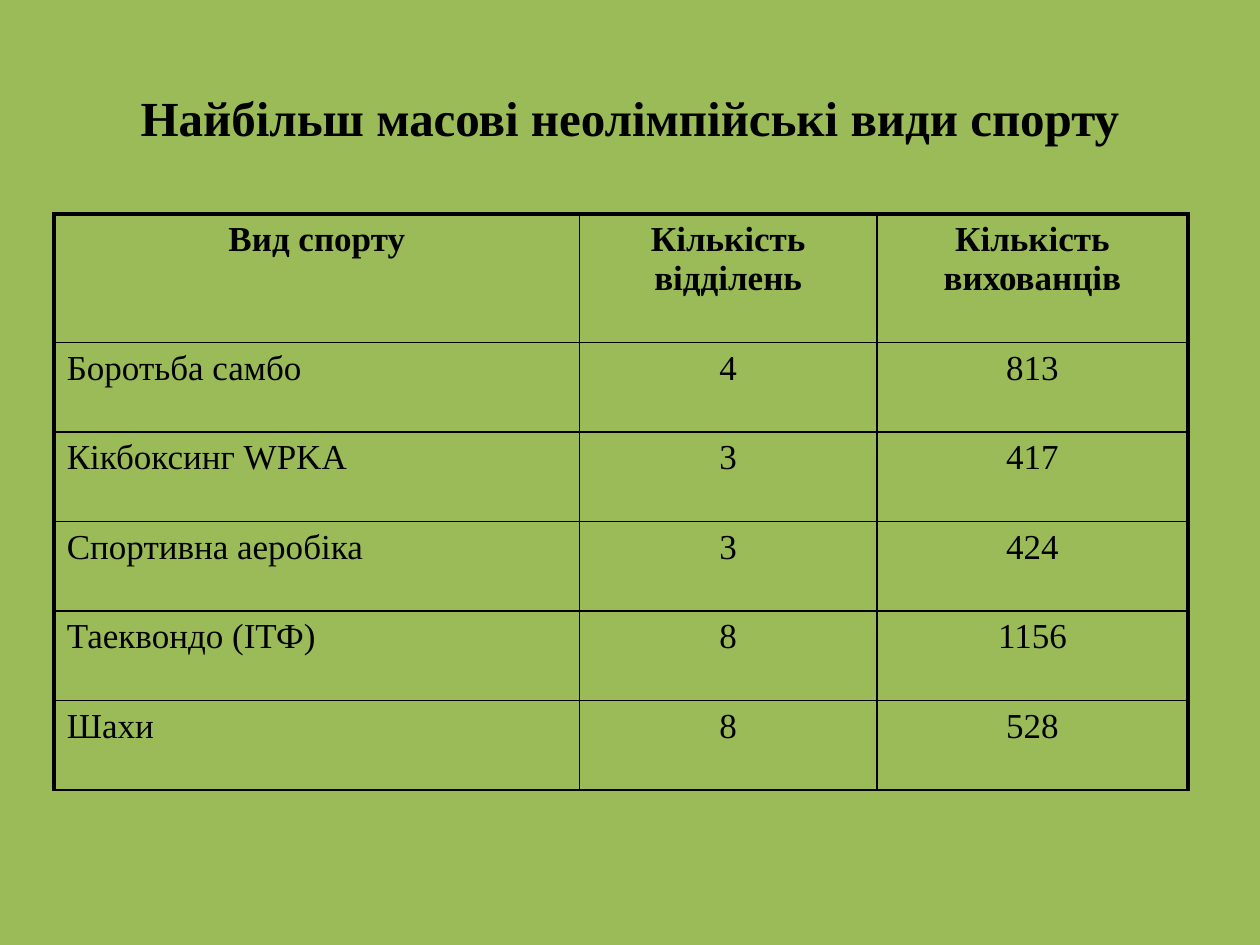
from lxml.etree import SubElement
from pptx import Presentation
from pptx.dml.color import RGBColor
from pptx.enum.text import MSO_ANCHOR, PP_ALIGN
from pptx.oxml.ns import qn
from pptx.util import Inches, Pt

GREEN = RGBColor(0x9B, 0xBB, 0x59)
BLACK = RGBColor(0, 0, 0)


def write(frame, text, size, bold, align):
    para = frame.paragraphs[0]
    para.alignment = align
    run = para.add_run()
    run.text = text
    run.font.color.rgb = BLACK
    style = {"name": "Times New Roman", "size": Pt(size), "bold": bold}
    for key, value in style.items():
        setattr(run.font, key, value)


def border(cell, sides):
    props = cell._tc.get_or_add_tcPr()
    for side, width in sides.items():
        line = SubElement(props, qn("a:" + side), w=str(Pt(width)))
        fill = SubElement(line, qn("a:solidFill"))
        SubElement(fill, qn("a:srgbClr"), val=str(BLACK))


prs = Presentation()
prs.slide_width, prs.slide_height = Inches(10), Inches(7.5)
slide = prs.slides.add_slide(prs.slide_layouts[6])
slide.background.fill.solid()
slide.background.fill.fore_color.rgb = GREEN

# Title
title = slide.shapes.add_textbox(Inches(0.5), Inches(0.3), Inches(9), Inches(1.25))
frame = title.text_frame
frame.word_wrap = True
frame.vertical_anchor = MSO_ANCHOR.MIDDLE
write(frame, "Найбільш масові неолімпійські види спорту", 28, True, PP_ALIGN.CENTER)

# Table grid
data = [
    ("Вид спорту", "Кількість відділень", "Кількість вихованців"),
    ("Боротьба самбо", "4", "813"),
    ("Кікбоксинг WPKA", "3", "417"),
    ("Спортивна аеробіка", "3", "424"),
    ("Таеквондо (ІТФ)", "8", "1156"),
    ("Шахи", "8", "528"),
]
widths = [4.17, 2.36, 2.47]
heights = [1.02] + [0.71] * 5
table = slide.shapes.add_table(
    len(data), len(widths), Inches(0.43), Inches(1.7),
    Inches(sum(widths)), Inches(sum(heights))).table
table.first_row = table.horz_banding = False
for col, width in zip(table.columns, widths):
    col.width = Inches(width)
for row, height in zip(table.rows, heights):
    row.height = Inches(height)

# Cells: bold header, centred numbers, thick outer frame
for i, texts in enumerate(data):
    for j, text in enumerate(texts):
        cell = table.cell(i, j)
        head = i == 0
        align = PP_ALIGN.CENTER if head or j else PP_ALIGN.LEFT
        write(cell.text_frame, text, 20, head, align)
        border(cell, {
            "lnL": 2.25 if j == 0 else 1,
            "lnR": 2.25 if j == len(widths) - 1 else 1,
            "lnT": 2.25 if head else 1,
            "lnB": 1,
        })
        cell.fill.background()

prs.save("out.pptx")
